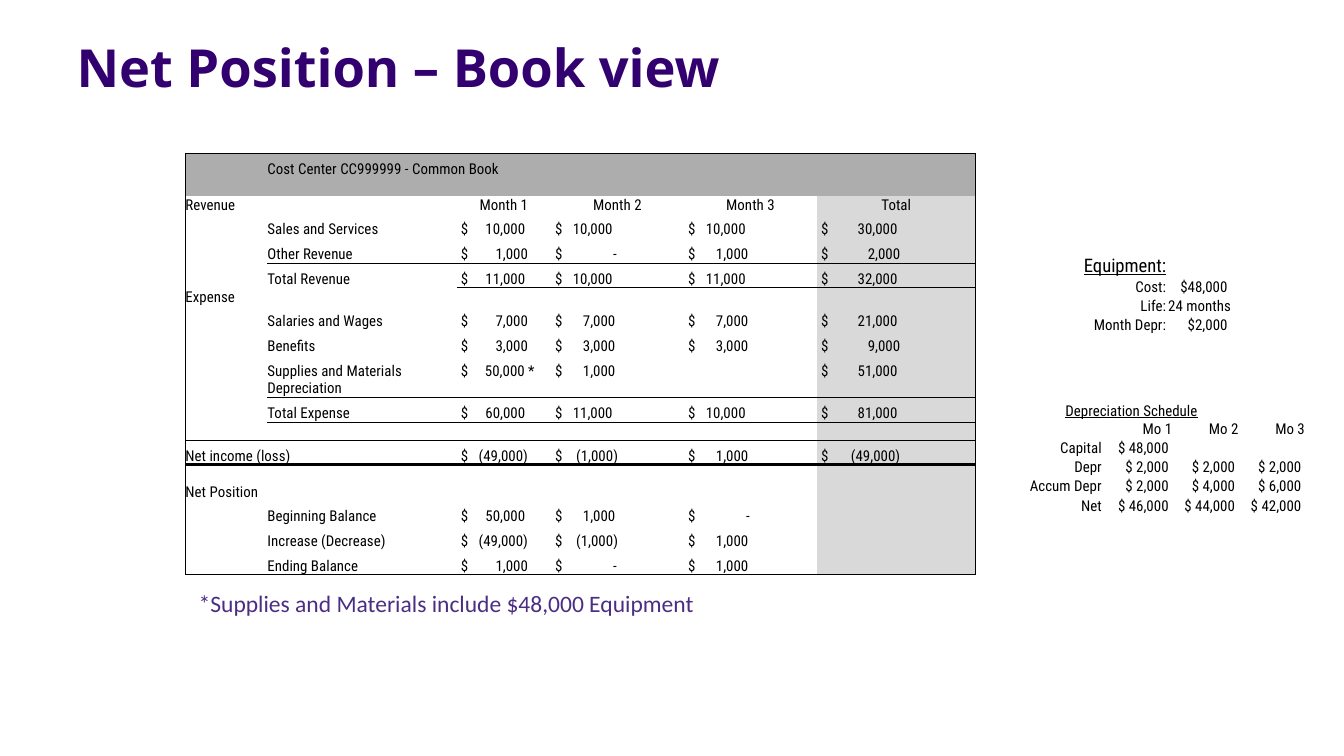
from dataclasses import dataclass

import pptx
import pptx.dml.color
import pptx.enum.text
import pptx.oxml
import pptx.oxml.ns
import pptx.util
from lxml import etree

PP_ALIGN = pptx.enum.text.PP_ALIGN
qn = pptx.oxml.ns.qn


@dataclass(frozen=True)
class Theme:
    """Colours, fonts, type sizes and line widths of the slide."""
    title: str = "33006F"
    note: str = "4B2E83"
    ink: str = "000000"
    header: str = "ADADAD"
    total: str = "D9D9D9"
    title_font: str = "Open Sans"
    note_font: str = "Calibri"
    table_font: str = "Roboto Condensed"
    title_size: float = 28.1
    note_size: float = 12.65
    heading_size: float = 10
    table_size: float = 8
    thin: float = 0.5
    thick: float = 2
    no_grid: str = "{2D5ABB26-0587-4C30-8999-92F81FD0307C}"


THEME = Theme()
CELL = 0.1

LEDGER = [
    ("", "Cost Center CC999999 - Common Book"),
    (),
    ("Revenue", "", "Month 1", "Month 2", "Month 3", "Total"),
    ("", "Sales and Services", "10,000", "10,000", "10,000", "30,000"),
    ("", "Other Revenue", "1,000", "-", "1,000", "2,000"),
    ("", "Total Revenue", "11,000", "10,000", "11,000", "32,000"),
    ("Expense",),
    ("", "Salaries and Wages", "7,000", "7,000", "7,000", "21,000"),
    ("", "Benefits", "3,000", "3,000", "3,000", "9,000"),
    ("", "Supplies and Materials", "50,000 *", "1,000", "", "51,000"),
    ("", "Depreciation"),
    ("", "Total Expense", "60,000", "11,000", "10,000", "81,000"),
    (),
    ("Net income (loss)", "", "(49,000)", "(1,000)", "1,000", "(49,000)"),
    (),
    ("Net Position",),
    ("", "Beginning Balance", "50,000", "1,000", "-"),
    ("", "Increase (Decrease)", "(49,000)", "(1,000)", "1,000"),
    ("", "Ending Balance", "1,000", "-", "1,000"),
]
LEDGER_COLS = (0.61, 1.41, 0.7, 0.99, 0.99, 1.18)
SHORT_ROWS = (1, 2, 6, 10, 12, 14, 15)
RULES = {4: (1, THEME.thin), 5: (2, THEME.thin), 10: (1, THEME.thin), 11: (1, THEME.thin),
         12: (0, THEME.thin), 13: (0, THEME.thick), 18: (0, THEME.thin)}
AMOUNT_TABS = {2: 0.48, 3: 0.43, 4: 0.43, 5: 0.57}
TAB_SHIFT = {"*": 0.07, ")": 0.02, "-": 0.03}

EQUIPMENT = [
    ("Equipment:", ""),
    ("Cost:", "$48,000 "),
    ("Life:", "24 months"),
    ("Month Depr:", "$2,000 "),
]
SCHEDULE = [
    ("Depreciation Schedule", "", "", ""),
    ("", "Mo 1", "Mo 2", "Mo 3"),
    ("Capital", "$ 48,000 ", "", ""),
    ("Depr", "$ 2,000 ", "$ 2,000 ", "$ 2,000 "),
    ("Accum Depr", "$ 2,000 ", "$ 4,000 ", "$ 6,000 "),
    ("Net", "$ 46,000 ", "$ 44,000 ", "$ 42,000 "),
]


def grid(*units):
    """Turn grid units into lengths."""
    return [pptx.util.Inches(u * CELL) for u in units]


def write(tf, text, *, size=THEME.table_size, font=THEME.table_font, color=THEME.ink,
          bold=False, underline=False, align=None, spacing=None, tab=None):
    """Write one formatted paragraph into a text frame."""
    p = tf.paragraphs[0]
    if tab:
        stops = etree.SubElement(p._p.get_or_add_pPr(), qn("a:tabLst"))
        etree.SubElement(stops, qn("a:tab"), pos=str(pptx.util.Inches(tab)), algn="r")
    p.alignment = align
    if spacing:
        p.line_spacing = spacing
    if not text:
        etree.SubElement(p._p, qn("a:endParaRPr"), sz=str(int(size * 100)))
        return
    r = p.add_run()
    r.text = text
    r.font.size = pptx.util.Pt(size)
    r.font.name = font
    r.font.bold = bold
    r.font.underline = underline
    r.font.color.rgb = pptx.dml.color.RGBColor.from_string(color)


def put_text(s, box, text, margins=(0.1, 0.05), **style):
    """Place a text box in the given grid box."""
    tf = s.shapes.add_textbox(*grid(*box)).text_frame
    tf.word_wrap = True
    tf.margin_left = tf.margin_right = pptx.util.Inches(margins[0])
    tf.margin_top = tf.margin_bottom = pptx.util.Inches(margins[1])
    write(tf, text, **style)


def put_table(s, box, cols, rows):
    """Add a bare table whose columns and rows share the box by weight."""
    left, top, width, height = grid(*box)
    table = s.shapes.add_table(len(rows), len(cols), left, top, width, height).table
    table.first_row = table.horz_banding = False
    table._tbl.tblPr.find(qn("a:tableStyleId")).text = THEME.no_grid
    for column, share in zip(table.columns, cols):
        column.width = int(width * share / sum(cols))
    for row, share in zip(table.rows, rows):
        row.height = int(height * share / sum(rows))
    return table


def format_cell(cell, text, *, fill=None, borders=None, indent=0, **style):
    """Fill one cell with text, borders and colour."""
    cell.margin_top = cell.margin_right = cell.margin_bottom = 0
    cell.margin_left = pptx.util.Inches(indent)
    cell.vertical_anchor = pptx.enum.text.MSO_ANCHOR.BOTTOM
    write(cell.text_frame, text, **style)
    for side in "LRTB":
        ln = etree.SubElement(cell._tc.get_or_add_tcPr(), qn(f"a:ln{side}"))
        if width := (borders or {}).get(side):
            ln.set("w", str(pptx.util.Pt(width)))
            solid = etree.SubElement(ln, qn("a:solidFill"))
            etree.SubElement(solid, qn("a:srgbClr"), val=THEME.ink)
        else:
            etree.SubElement(ln, qn("a:noFill"))
    if fill:
        cell.fill.solid()
        cell.fill.fore_color.rgb = pptx.dml.color.RGBColor.from_string(fill)
    else:
        cell.fill.background()


def rule_below(row, col):
    """Return the width of the line under a ledger cell, if any."""
    first, width = RULES.get(row, (len(LEDGER_COLS), None))
    return width if col >= first else None


def amount_tab(col, text):
    """Return the right tab stop of a ledger amount."""
    short = 0.02 if text.strip("()").count("") == 6 else 0
    return AMOUNT_TABS[col] + TAB_SHIFT.get(text[-1], 0) + short


def put_ledger(s, box):
    """Build the cost center ledger."""
    heights = [8 if i in SHORT_ROWS else 11 for i in range(len(LEDGER))]
    table = put_table(s, box, LEDGER_COLS, heights)
    last = len(LEDGER_COLS) - 1
    table.cell(0, 1).merge(table.cell(0, 2))
    for i, row in enumerate(LEDGER):
        if row and row[0]:
            table.cell(i, 0).merge(table.cell(i, 1))
        for j in range(last + 1):
            text = row[j] if j < len(row) else ""
            borders = {"L": THEME.thin if j == 0 else None,
                       "R": THEME.thin if j == last else None,
                       "T": THEME.thin if i == 0 else rule_below(i - 1, j),
                       "B": rule_below(i, j)}
            fill = THEME.header if i < 2 else THEME.total if j == last else None
            style = {}
            if j > 1 and i == 2:
                style = {"align": PP_ALIGN.CENTER}
            elif j > 1 and text:
                style = {"indent": 0.03, "tab": amount_tab(j, text)}
                text = f"$\t{text}"
            format_cell(table.cell(i, j), text, fill=fill, borders=borders, **style)


def put_side_table(s, box, cols, rows, data, span=False, heading_size=THEME.table_size):
    """Build a right-aligned table with an underlined heading."""
    table = put_table(s, box, cols, rows)
    if span:
        table.cell(0, 0).merge(table.cell(0, len(cols) - 1))
    for i, row in enumerate(data):
        for j, text in enumerate(row):
            format_cell(table.cell(i, j), text, underline=i == 0,
                        size=heading_size if i == 0 else THEME.table_size,
                        align=PP_ALIGN.CENTER if span and i == 0 else PP_ALIGN.RIGHT)


def main():
    """Build and save the slide."""
    prs = pptx.Presentation()
    prs.slide_width, prs.slide_height = grid(100, 56.25)
    s = prs.slides.add_slide(prs.slide_layouts[6])
    put_text(s, (5, 2.75, 98.1, 3.7), "Net Position – Book view", margins=(0.07, 0.04),
             size=THEME.title_size, font=THEME.title_font, color=THEME.title,
             bold=True, spacing=0.9)
    put_ledger(s, (13.8, 11.4, 58.8, 31.4))
    put_text(s, (13.8, 43.3, 44, 3.1), "*Supplies and Materials include $48,000 Equipment",
             size=THEME.note_size, font=THEME.note_font, color=THEME.note)
    put_side_table(s, (76.9, 18.8, 14.7, 6.1), (0.98, 0.48), (18, 14, 14, 14), EQUIPMENT,
                   heading_size=THEME.heading_size)
    put_side_table(s, (71.3, 29.9, 25.8, 8.4), (1.06, 0.52, 0.49, 0.49),
                   (13, 13, 14, 14, 14, 14), SCHEDULE, span=True)
    prs.save("out.pptx")


if __name__ == "__main__":
    main()
